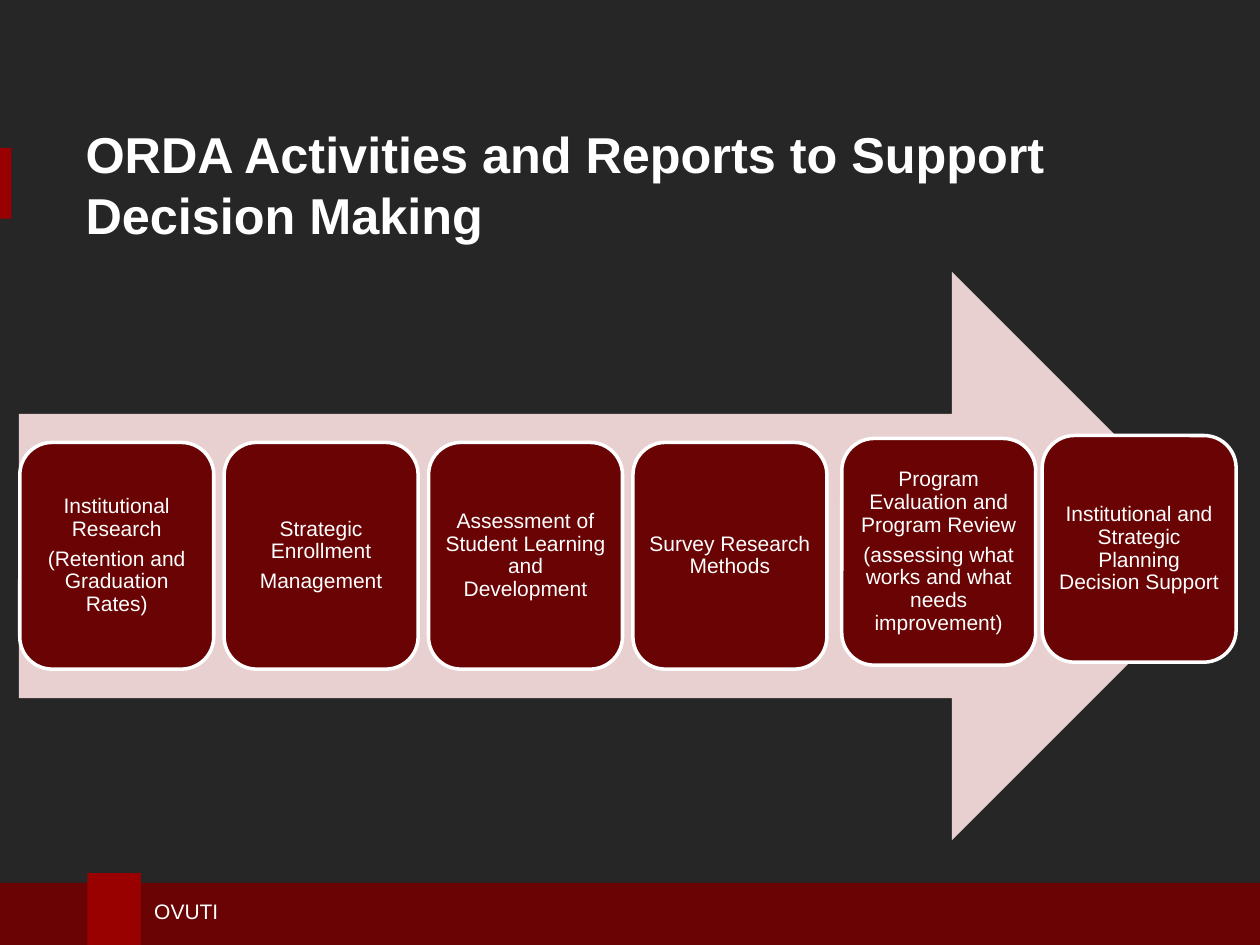
from pptx import Presentation
from pptx import util as u
from pptx.dml.color import RGBColor
from pptx.enum import shapes, text

COLORS = {"back": "262626", "dark": "690304", "accent": "990000",
          "arrow": "E8D0D0", "white": "FFFFFF"}
SHAPE = shapes.MSO_SHAPE
ALIGN = text.PP_ALIGN


def add_block(kind, box, color):
    sp = s.shapes.add_shape(kind, *[u.Cm(v) for v in box])
    sp.shadow.inherit = False
    sp.fill.solid()
    sp.fill.fore_color.rgb = RGBColor.from_string(COLORS[color])
    sp.line.fill.background()
    return sp


def write(tf, lines, size, para_format, bold=False):
    tf.word_wrap = True
    tf.auto_size = text.MSO_AUTO_SIZE.NONE
    tf.vertical_anchor = text.MSO_ANCHOR.MIDDLE
    for i, line in enumerate(lines):
        p = tf.paragraphs[0] if i == 0 else tf.add_paragraph()
        for name, value in para_format.items():
            setattr(p, name, value)
        r = p.add_run()
        r.text = line
        for name, value in {"name": "Arial", "size": u.Pt(size), "bold": bold}.items():
            setattr(r.font, name, value)
        r.font.color.rgb = RGBColor.from_string(COLORS["white"])


prs = Presentation()
prs.slide_width, prs.slide_height = u.Cm(25.4), u.Cm(19.05)
s = prs.slides.add_slide(prs.slide_layouts[5])
s.background.fill.solid()
s.background.fill.fore_color.rgb = RGBColor.from_string(COLORS["back"])

# Footer band, its marker and the marker beside the title
for box, color in [((0, 17.8, 25.4, 1.25), "dark"),
                   ((1.76, 17.6, 1.08, 1.45), "accent"),
                   ((0, 2.98, 0.23, 1.43), "accent")]:
    add_block(SHAPE.RECTANGLE, box, color)
footer = s.shapes.add_textbox(u.Cm(2.86), u.Cm(17.99), u.Cm(10.03), u.Cm(0.77))
write(footer.text_frame, ["OVUTI"], 12, {"alignment": ALIGN.LEFT})

# Title
title = s.shapes.title
for name, value in {"left": 1.47, "top": 2.82, "width": 22.23, "height": 1.78}.items():
    setattr(title, name, u.Cm(value))
write(title.text_frame, ["ORDA Activities and Reports to Support Decision Making"],
      28.8, {"alignment": ALIGN.LEFT}, bold=True)

# Arrow behind the activities
add_block(SHAPE.RIGHT_ARROW, (0.38, 5.48, 24.54, 11.46), "arrow")

# Activities: four at an equal pitch, the last two set slightly higher
first, pitch, top = 0.4, 4.12, 8.92
activities = [
    (first, top, ["Institutional Research", "(Retention and Graduation Rates)"]),
    (first + pitch, top, ["Strategic Enrollment", "Management"]),
    (first + 2 * pitch, top, ["Assessment of Student Learning and Development"]),
    (first + 3 * pitch, top, ["Survey Research Methods"]),
    (16.97, 8.84, ["Program Evaluation and Program Review",
                   "(assessing what works and what needs improvement)"]),
    (21.01, 8.78, ["Institutional and Strategic Planning Decision Support"]),
]
activity_format = {"alignment": ALIGN.CENTER, "line_spacing": 0.9,
                   "space_after": u.Pt(4.2)}
for left, y, lines in activities:
    sp = add_block(SHAPE.ROUNDED_RECTANGLE, (left, y, 3.91, 4.57), "dark")
    sp.line.color.rgb = RGBColor.from_string(COLORS["white"])
    sp.line.width = u.Pt(2)
    tf = sp.text_frame
    for side in ("left", "top", "right", "bottom"):
        setattr(tf, f"margin_{side}", u.Cm(0.13))
    write(tf, lines, 12, activity_format)

prs.save("out.pptx")
